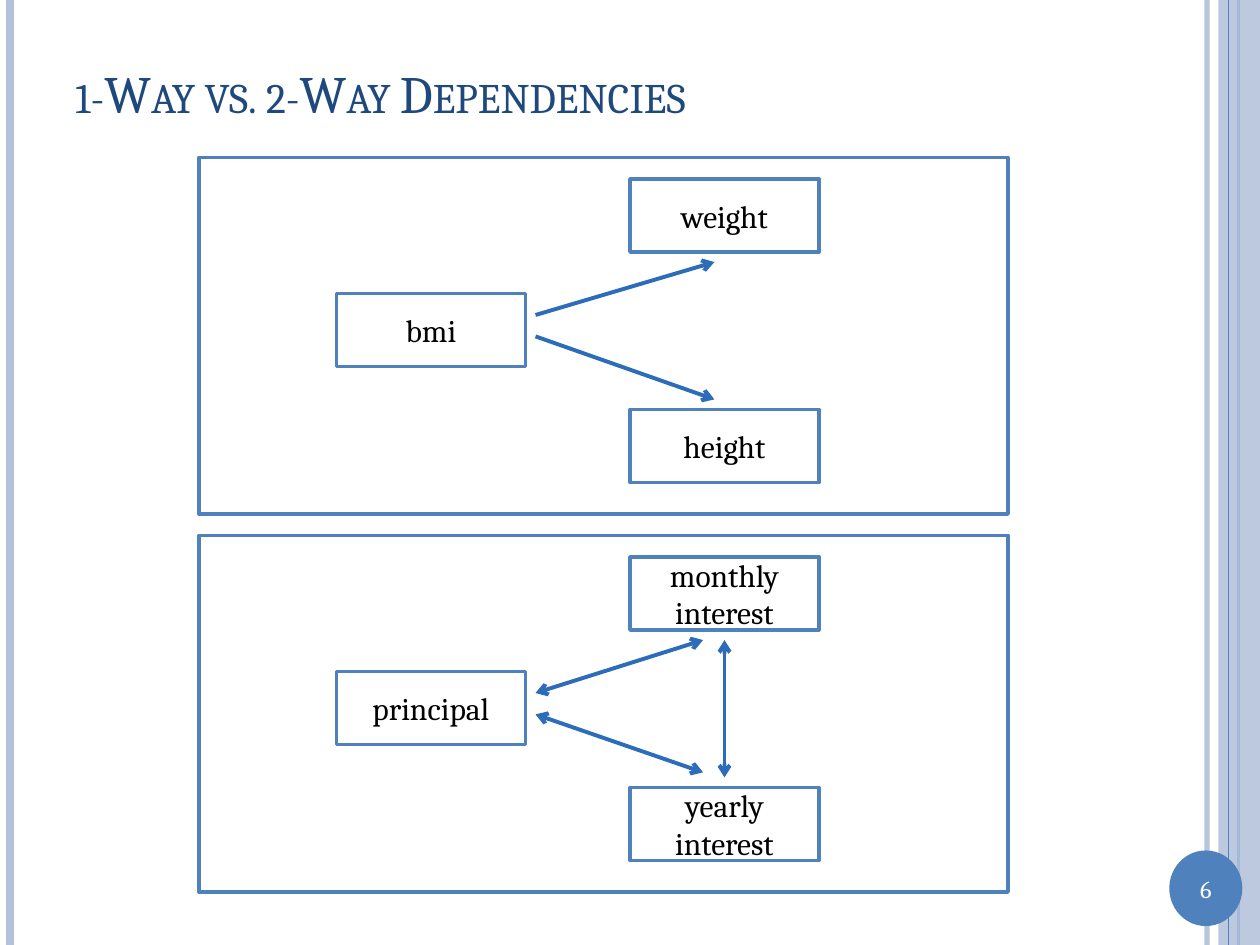
from lxml import etree
from pptx import Presentation
from pptx.dml.color import RGBColor
from pptx.enum.shapes import MSO_CONNECTOR, MSO_SHAPE
from pptx.enum.text import MSO_ANCHOR, PP_ALIGN
from pptx.oxml.ns import qn
from pptx.util import Inches, Pt

RECT, OVAL = MSO_SHAPE.RECTANGLE, MSO_SHAPE.OVAL
STRAIGHT = MSO_CONNECTOR.STRAIGHT
MIDDLE, CENTER, LEFT = MSO_ANCHOR.MIDDLE, PP_ALIGN.CENTER, PP_ALIGN.LEFT
BLUE, PALE, ARROW = "4F81BD", "B3C1DB", "2C6CB9"
NAVY, WHITE, BLACK = "1F497D", "FFFFFF", "000000"
rgb = RGBColor.from_string

prs = Presentation()
prs.slide_width, prs.slide_height = Inches(10), Inches(7.5)
s = prs.slides.add_slide(prs.slide_layouts[6])


def add_line(start, end, color, width, ends=(), alpha=None):
    """Draw a line; ends lists the arrowheads, "headEnd" at start and "tailEnd" at end."""
    line = s.shapes.add_connector(STRAIGHT, *map(Inches, start + end))
    line.line.color.rgb = rgb(color)
    line.line.width = Pt(width)
    sp_pr = line._element.spPr
    ln = sp_pr.find(qn("a:ln"))
    for end_name in ends:
        etree.SubElement(ln, qn("a:" + end_name), type="arrow")
    if alpha:
        set_alpha(ln, alpha)
    etree.SubElement(sp_pr, qn("a:effectLst"))


def set_alpha(element, percent):
    color = next(element.iter(qn("a:srgbClr")))
    etree.SubElement(color, qn("a:alpha"), val=str(percent * 1000))


# Side decoration
add_line((9.58, 0), (9.58, 7.5), PALE, 3, alpha=93)
add_line((0.08, 0), (0.08, 7.5), PALE, 4.5)
add_line((9.83, 0), (9.83, 7.5), BLUE, 1.5)
band = s.shapes.add_shape(RECT, *map(Inches, (9.67, 0, 0.33, 7.5)))
band.fill.solid()
band.fill.fore_color.rgb = rgb(PALE)
set_alpha(band._element.spPr, 87)
band.line.fill.background()
band.shadow.inherit = False
add_line((9.75, 0), (9.75, 7.5), BLUE, 0.75)
badge = s.shapes.add_shape(OVAL, *map(Inches, (9.28, 6.75, 0.58, 0.6)))
badge.fill.solid()
badge.fill.fore_color.rgb = rgb(BLUE)
badge.line.fill.background()
badge.shadow.inherit = False

# Slide number and title
labels = [
    ("6", (9.28, 6.88, 0.58, 0.34), 14, WHITE, CENTER),
    ("1-Way vs. 2-Way Dependencies", (0.5, 0.3, 8.67, 0.87), 30, NAVY, LEFT),
]
for text, box, size, color, align in labels:
    tf = s.shapes.add_textbox(*map(Inches, box)).text_frame
    tf.word_wrap = True
    tf.vertical_anchor = MIDDLE
    p = tf.paragraphs[0]
    p.alignment = align
    r = p.add_run()
    r.text = text
    r.font.name, r.font.size = "Cambria", Pt(size)
    r.font.color.rgb = rgb(color)
r.font._element.set("cap", "small")  # the title is the last label

# Dependency panels: top edge, source and targets, arrowheads, arrows below the panel top
ONE_WAY, TWO_WAY = ["tailEnd"], ["headEnd", "tailEnd"]
panels = [
    (1.25, ("bmi", "weight", "height"), ONE_WAY,
     [((4.25, 1.25), (5.67, 0.83)), ((4.25, 1.42), (5.67, 1.92))]),
    (4.25, ("principal", "monthly interest", "yearly interest"), TWO_WAY,
     [((4.25, 1.25), (5.58, 0.83)), ((4.25, 1.42), (5.58, 1.88)),
      ((5.75, 1.92), (5.75, 0.83))]),
]
NODE_SPOTS = [(2.67, 1.08), (5, 0.17), (5, 2)]
for top, names, ends, arrows in panels:
    boxes = [("", (1.58, top, 6.42, 2.83))]
    boxes += [(name, (x, top + dy, 1.5, 0.58)) for name, (x, dy) in zip(names, NODE_SPOTS)]
    for name, box in boxes:
        sp = s.shapes.add_shape(RECT, *map(Inches, box))
        sp.shadow.inherit = False
        sp.fill.solid()
        sp.fill.fore_color.rgb = rgb(WHITE)
        sp.line.color.rgb = rgb(BLUE)
        sp.line.width = Pt(2)
        if name:
            tf = sp.text_frame
            tf.word_wrap = True
            tf.vertical_anchor = MIDDLE
            p = tf.paragraphs[0]
            p.alignment = CENTER
            r = p.add_run()
            r.text = name
            r.font.name, r.font.size = "Cambria", Pt(18)
            r.font.color.rgb = rgb(BLACK)
    for (x1, y1), (x2, y2) in arrows:
        add_line((x1, top + y1), (x2, top + y2), ARROW, 2.25, ends)

prs.save("out.pptx")
